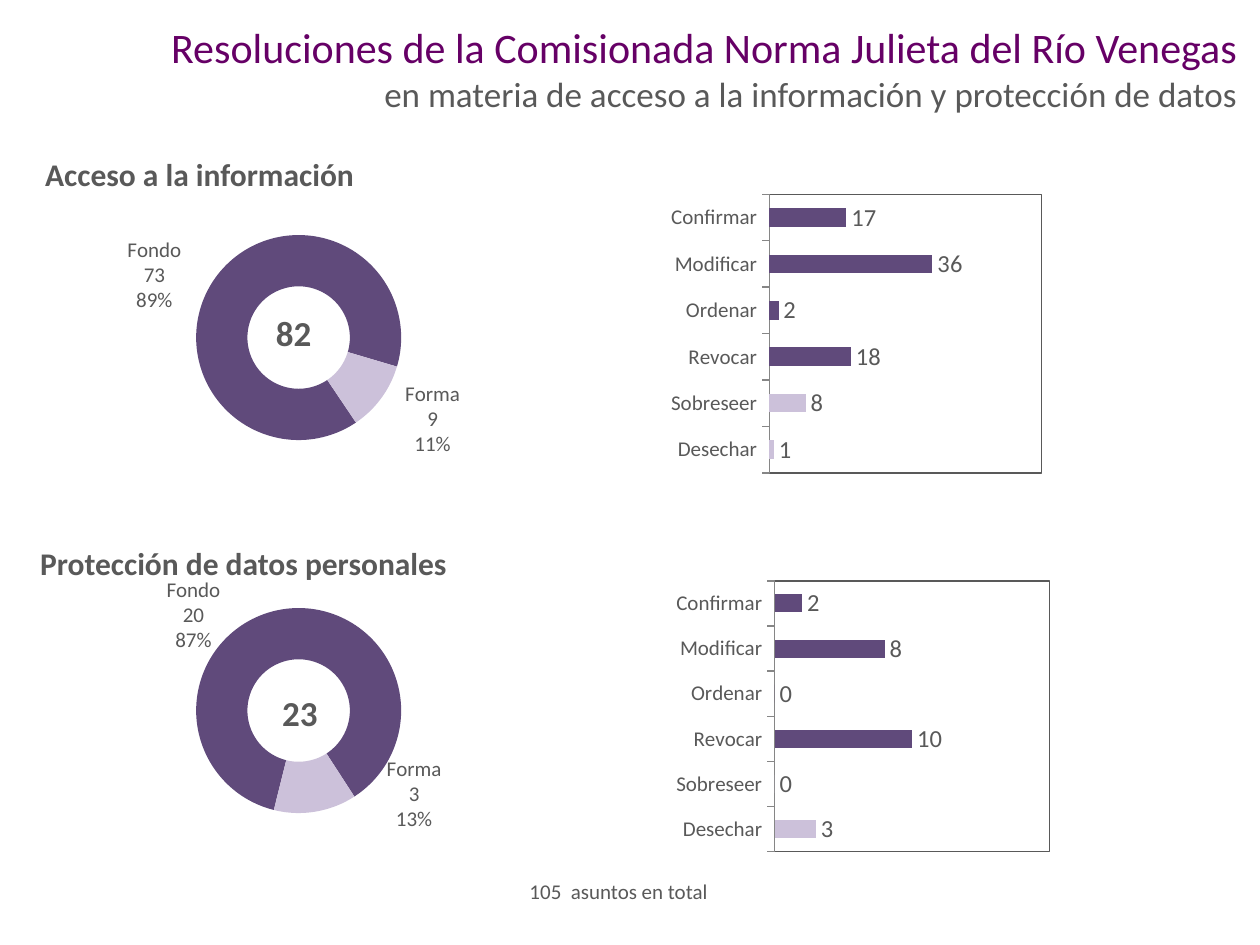
from pptx import Presentation, util as u
from pptx.chart.data import CategoryChartData
from pptx.dml.color import RGBColor
from pptx.enum import chart as ch, text
from pptx.oxml import parse_xml
from pptx.oxml.ns import nsdecls, qn

PURPLE = RGBColor(0x60, 0x4A, 0x7B)
PALE = RGBColor(0xCC, 0xC1, 0xDA)
TITLE = RGBColor(0x66, 0x00, 0x66)
GREY = RGBColor(0x59, 0x59, 0x59)
AXIS = RGBColor(0x86, 0x86, 0x86)
FONT = "Calibri"
COLS, ROWS = 100, 75  # slide grid
OUTCOMES = ["Desechar", "Sobreseer", "Revocar", "Ordenar", "Modificar", "Confirmar"]

prs = Presentation()
prs.slide_width, prs.slide_height = u.Inches(10), u.Inches(7.5)


def cells(col, row, w, h):
    """Turn grid columns and rows into slide lengths."""
    cw, rh = prs.slide_width / COLS, prs.slide_height / ROWS
    return [u.Emu(int(n)) for n in (col * cw, row * rh, w * cw, h * rh)]


def within(region, col, row, w, h):
    return cells(region[0] + col, region[1] + row, w, h)


def style(font, size, color=GREY, bold=False):
    font.name, font.size, font.bold = FONT, u.Pt(size), bold
    font.color.rgb = color


def add_text(s, box, words, size=12, bold=False, align=text.PP_ALIGN.LEFT):
    tf = s.shapes.add_textbox(*box).text_frame
    tf.word_wrap = True
    p = tf.paragraphs[0]
    p.alignment = align
    r = p.add_run()
    r.text = words
    style(r.font, size, bold=bold)


def manual_layout(x, y, w=None, h=None):
    """Inner plot layout, or a label offset when no size is given."""
    parts = [("x", x), ("y", y)]
    head = ""
    if w is not None:
        head = '<c:layoutTarget val="inner"/><c:xMode val="edge"/><c:yMode val="edge"/>'
        parts += [("w", w), ("h", h)]
    body = "".join(f'<c:{tag} val="{val}"/>' for tag, val in parts)
    return f'<c:layout {nsdecls("c")}><c:manualLayout>{head}{body}</c:manualLayout></c:layout>'


def add_chart(s, box, kind, cats, vals, plot_box):
    data = CategoryChartData()
    data.categories = cats
    data.add_series("Series 1", vals)
    chart = s.shapes.add_chart(kind, *box, data).chart
    chart.has_title = chart.has_legend = False
    style(chart.font, 12)
    area = chart.plots[0]._element.getparent()
    for old in area.findall(qn("c:layout")):
        area.remove(old)
    area.insert(0, parse_xml(manual_layout(*plot_box)))
    return chart, area


def color_point(series, i, color):
    fill = series.points[i].format.fill
    fill.solid()
    fill.fore_color.rgb = color


def add_doughnut(s, box, vals, start, offsets):
    chart, area = add_chart(s, box, ch.XL_CHART_TYPE.DOUGHNUT, ["Fondo", "Forma"],
                            vals, (0.31, 0.13, 0.4, 0.74))
    plot = chart.plots[0]
    plot.vary_by_categories = True
    plot.has_data_labels = False
    series = plot.series[0]
    for i, color in enumerate((PURPLE, PALE)):
        color_point(series, i, color)
    for tag, val in (("firstSliceAng", start), ("holeSize", 70)):
        plot._element.find(qn(f"c:{tag}")).set("val", str(val))
    # Category, value and percentage on three lines, moved off the ring
    show = "".join(f'<c:show{name} val="{on}"/>' for name, on in (
        ("LegendKey", 0), ("Val", 1), ("CatName", 1), ("SerName", 0),
        ("Percent", 1), ("BubbleSize", 0))) + "<c:separator>\n</c:separator>"
    labels = "".join(f'<c:dLbl><c:idx val="{i}"/>{manual_layout(*xy)}{show}</c:dLbl>'
                     for i, xy in enumerate(offsets))
    series._element.find(qn("c:cat")).addprevious(parse_xml(
        f'<c:dLbls {nsdecls("c")}>{labels}{show}<c:showLeaderLines val="0"/></c:dLbls>'))
    style(series.data_labels.font, 12)
    for i in range(len(vals)):
        style(series.points[i].data_label.font, 12)


def add_bars(s, box, vals, top, unit, pale, plot_box):
    chart, area = add_chart(s, box, ch.XL_CHART_TYPE.BAR_CLUSTERED, OUTCOMES, vals, plot_box)
    plot = chart.plots[0]
    plot.gap_width, plot.vary_by_categories = 150, False
    series = plot.series[0]
    series.format.fill.solid()
    series.format.fill.fore_color.rgb = PURPLE
    for i in range(pale):
        color_point(series, i, PALE)
    labels = series.data_labels
    labels.show_value = True
    labels.position = ch.XL_LABEL_POSITION.OUTSIDE_END
    style(labels.font, 14)
    axis = chart.value_axis
    axis.minimum_scale, axis.maximum_scale, axis.major_unit = 0, top, unit
    axis.has_major_gridlines = axis.visible = False
    axis = chart.category_axis
    axis.major_tick_mark = ch.XL_TICK_MARK.OUTSIDE
    axis.format.line.color.rgb = AXIS
    style(axis.tick_labels.font, 12)
    # Frame around the plot
    area.append(parse_xml(
        f'<c:spPr {nsdecls("c", "a")}><a:noFill/><a:ln w="9525"><a:solidFill>'
        f'<a:srgbClr val="{GREY}"/></a:solidFill></a:ln></c:spPr>'))


def add_header(s, box):
    title = s.shapes.title
    title.left, title.top, title.width, title.height = box
    tf = title.text_frame
    tf.vertical_anchor = text.MSO_ANCHOR.MIDDLE
    p = tf.paragraphs[0]
    p.alignment = text.PP_ALIGN.RIGHT
    lines = (("Resoluciones de la Comisionada Norma Julieta del Río Venegas", 24, TITLE),
             ("en materia de acceso a la información y protección de datos", 20, GREY))
    for i, (words, size, color) in enumerate(lines):
        if i:
            p.add_line_break()
        r = p.add_run()
        r.text = words
        style(r.font, size, color)


def add_section(s, region, heading, ring, total, bars):
    """Heading, doughnut with its total, and bars, from the region's corner."""
    ring_at, ring_data = ring
    total_at, count = total
    bars_at, bars_data = bars
    add_doughnut(s, within(region, *ring_at), *ring_data)
    add_bars(s, within(region, *bars_at), *bars_data)
    add_text(s, within(region, 0, 0, 44.9, 4), heading, size=18, bold=True)
    add_text(s, within(region, *total_at), count, size=20, bold=True,
             align=text.PP_ALIGN.CENTER)


def main():
    s = prs.slides.add_slide(prs.slide_layouts[5])
    add_header(s, cells(0.4, 1.2, 98.8, 8.4))
    add_section(
        s, (2.6, 11.8), "Acceso a la información",
        ring=((0.3, 4, 40.8, 22), ((73, 9), 146, ((-0.16, -0.06), (0.14, 0.13)))),
        total=((16.3, 12.4, 8.8, 4.4), "82"),
        bars=((42.6, 1.1, 40.7, 28),
              ((1, 8, 18, 2, 36, 17), 60, 40, 2, (0.39, 0.09, 0.53, 0.79))))
    add_section(
        s, (2.2, 42.7), "Protección de datos personales",
        ring=((0.7, 2.7, 40.8, 22), ((20, 3), 194, ((-0.18, -0.07), (0.2, 0.03)))),
        total=((18.2, 11.7, 6.8, 4.4), "23"),
        bars=((46.7, -0.4, 37, 27.2),
              ((3, 0, 10, 0, 8, 2), 20, 8, 2, (0.34, 0.14, 0.59, 0.79))))
    # Overall total
    add_text(s, cells(25.1, 69.2, 48, 3), "105  asuntos en total",
             align=text.PP_ALIGN.CENTER)
    prs.save("out.pptx")


if __name__ == "__main__":
    main()
